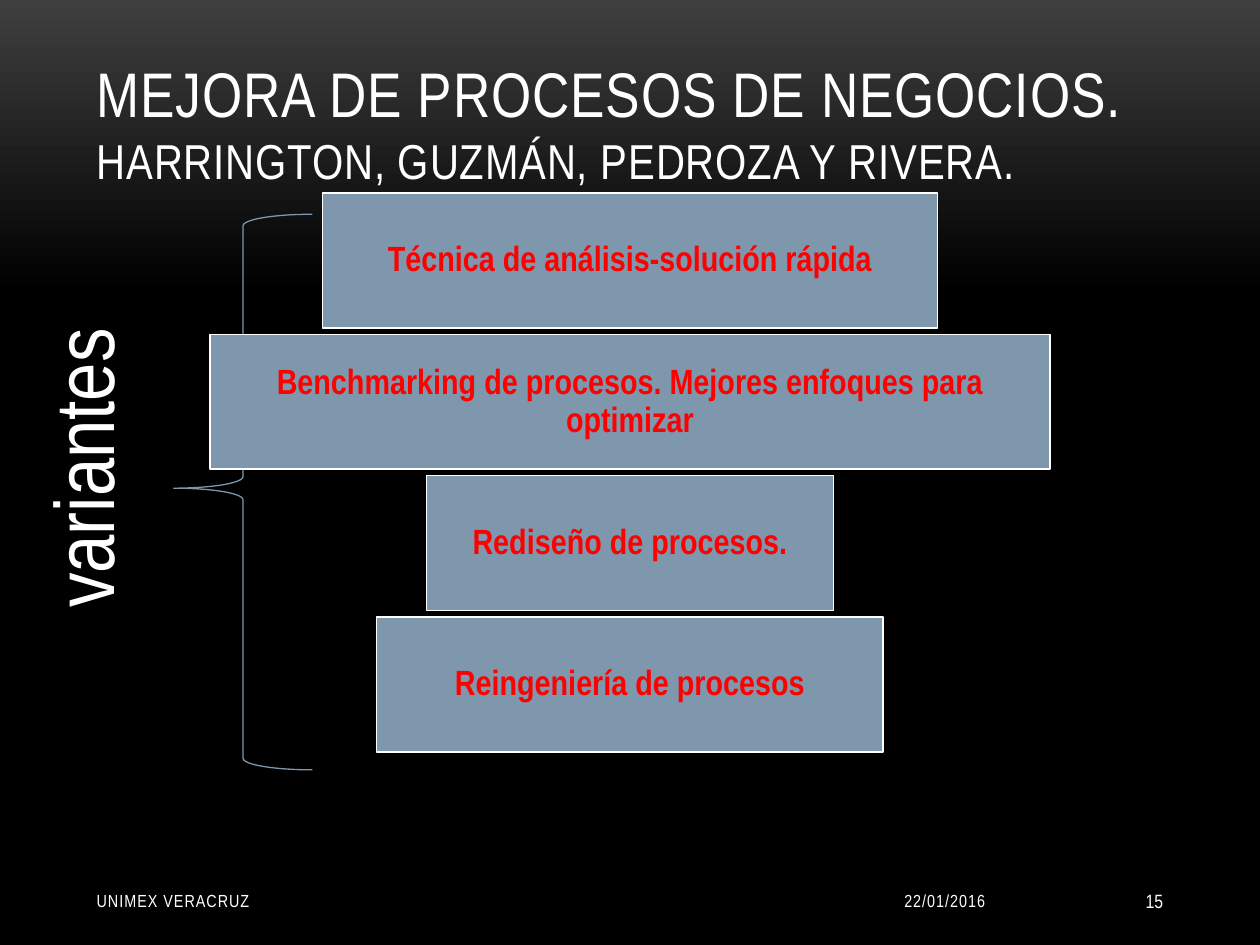
from pptx import Presentation
from pptx.dml.color import RGBColor
from pptx.enum.shapes import MSO_SHAPE as Shape
from pptx.enum.text import MSO_ANCHOR as Anchor, PP_ALIGN as Align
from pptx.util import Cm, Pt

WHITE = RGBColor(0xFF, 0xFF, 0xFF)
BLACK = RGBColor(0, 0, 0)
GREY = RGBColor(0x3F, 0x3F, 0x3F)
STEEL = RGBColor(0x7E, 0x97, 0xAD)
RED = RGBColor(0xFF, 0, 0)
FACE = "Arial Narrow"

# Text and width in cm of each variant
STEPS = [
    ("Técnica de análisis-solución rápida", 12.4),
    ("Benchmarking de procesos. Mejores enfoques para optimizar", 16.94),
    ("Rediseño de procesos.", 8.2),
    ("Reingeniería de procesos", 10.21),
]


def style(font, size, color=WHITE, bold=False):
    font.name = FACE
    font.size = Pt(size)
    font.bold = bold
    font.color.rgb = color


def track(para, gap):
    """Set the letter spacing of all runs, in hundredths of a point."""
    for run in para.runs:
        run.font._element.set("spc", str(gap))


def add_text(slide, box, text, size, align=Align.LEFT, anchor=Anchor.MIDDLE):
    label = slide.shapes.add_textbox(*map(Cm, box))
    frame = label.text_frame
    frame.word_wrap = True
    frame.vertical_anchor = anchor
    para = frame.paragraphs[0]
    para.text = text
    para.alignment = align
    style(para.font, size)
    return label


def paint_back(slide):
    fill = slide.background.fill
    fill.gradient()
    fill.gradient_angle = 270
    for stop, color, place in zip(fill.gradient_stops, (GREY, BLACK), (0, 0.31)):
        stop.color.rgb = color
        stop.position = place


def add_title(slide, box):
    label = add_text(slide, box, "MEJORA DE PROCESOS DE NEGOCIOS.\v"
                     "HARRINGTON, GUZMÁN, PEDROZA Y RIVERA.", 36,
                     anchor=Anchor.BOTTOM)
    para = label.text_frame.paragraphs[0]
    para.runs[1].font.size = Pt(28)
    track(para, 50)


def add_stack(slide, box, gap=0.13):
    """Stack the variants as centred bars of equal height."""
    left, top, width, height = box
    pitch = (height + gap) / len(STEPS)
    for i, (text, wide) in enumerate(STEPS):
        bar = slide.shapes.add_shape(
            Shape.RECTANGLE, Cm(left + (width - wide) / 2),
            Cm(top + i * pitch), Cm(wide), Cm(pitch - gap))
        bar.shadow.inherit = False
        bar.fill.solid()
        bar.fill.fore_color.rgb = STEEL
        bar.line.color.rgb = WHITE
        bar.line.width = Pt(0.85)
        frame = bar.text_frame
        frame.word_wrap = True
        frame.vertical_anchor = Anchor.MIDDLE
        frame.margin_left = frame.margin_right = Cm(0.15)
        frame.margin_top = frame.margin_bottom = Cm(0.15)
        para = frame.paragraphs[0]
        para.text = text
        para.alignment = Align.CENTER
        para.line_spacing = 0.9
        style(para.font, 20, RED, True)


def add_brace(slide, box):
    brace = slide.shapes.add_shape(Shape.LEFT_BRACE, *map(Cm, box))
    brace.adjustments[0] = 0.083
    brace.adjustments[1] = 0.493
    brace.shadow.inherit = False
    brace.fill.background()
    brace.line.color.rgb = STEEL
    brace.line.width = Pt(0.75)


def add_side(slide, box):
    """Place the upright label, given its box before the turn."""
    label = add_text(slide, box, "variantes", 48, Align.CENTER, Anchor.TOP)
    label.rotation = 270


def add_foot(slide, box):
    left, top, width, height = box
    parts = [
        ("22/01/2016", 14.18, 4.23, 10, Align.RIGHT, 60),
        ("UNIMEX VERACRUZ", 0, 8.05, 10, Align.LEFT, 60),
        ("15", width - 2.75, 2.75, 11, Align.RIGHT, 0),
    ]
    for text, shift, wide, size, align, gap in parts:
        label = add_text(slide, (left + shift, top, wide, height),
                         text, size, align)
        track(label.text_frame.paragraphs[0], gap)


def main():
    deck = Presentation()
    deck.slide_width, deck.slide_height = Cm(25.4), Cm(19.05)
    slide = deck.slides.add_slide(deck.slide_layouts[6])
    paint_back(slide)
    add_title(slide, (1.7, 0.76, 22.02, 3.18))
    add_foot(slide, (1.7, 17.65, 22, 1.02))
    add_brace(slide, (3.5, 4.32, 2.8, 11.2))
    add_stack(slide, (4.23, 3.89, 16.94, 11.27))
    add_side(slide, (-3.45, 8.28, 10.21, 2.31))
    deck.save("out.pptx")


if __name__ == "__main__":
    main()
